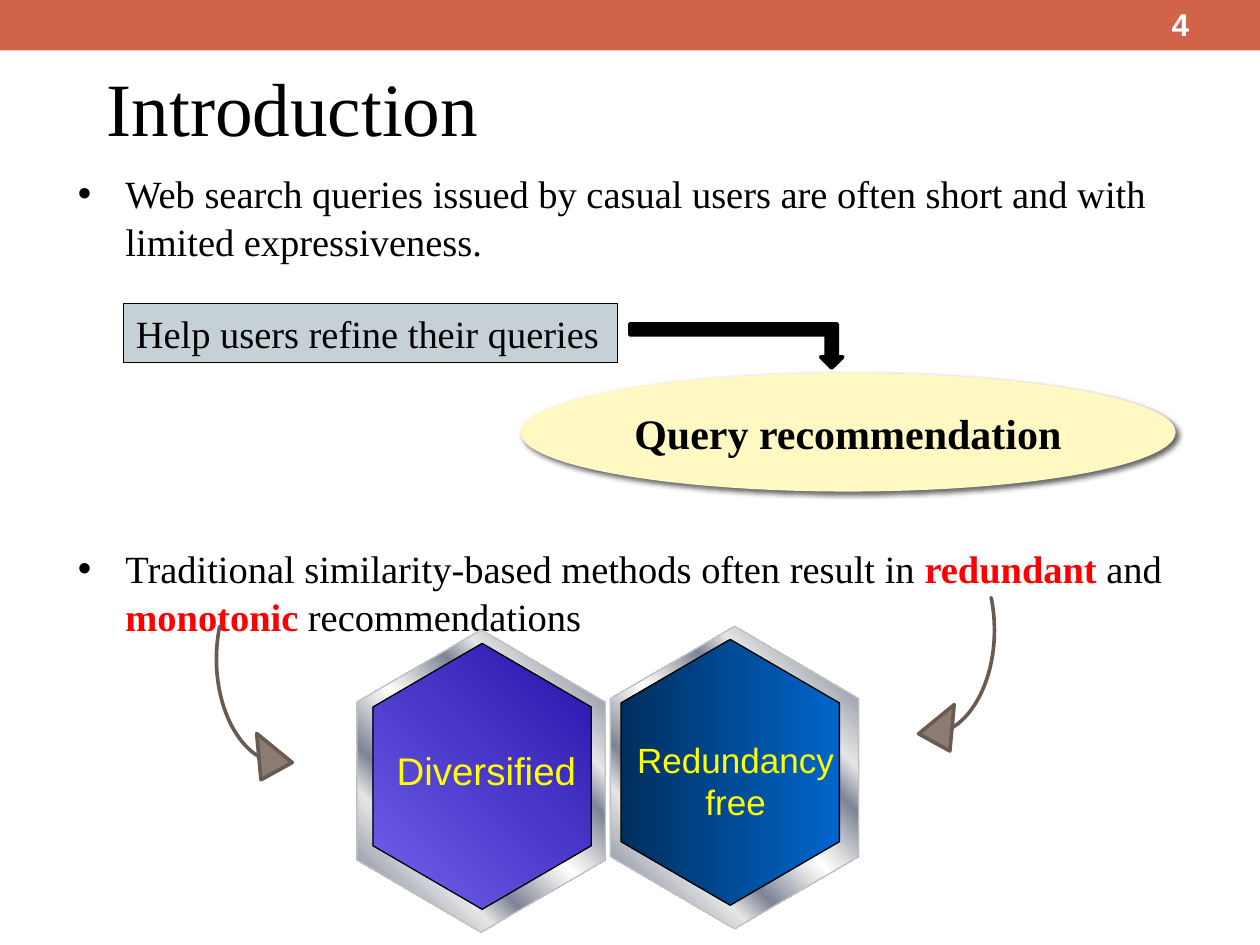
from dataclasses import dataclass
from typing import Optional

import pptx
import pptx.dml.color
import pptx.enum.shapes
import pptx.enum.text
import pptx.oxml
import pptx.oxml.ns
import pptx.util
from lxml import etree

Cm, Pt = pptx.util.Cm, pptx.util.Pt
qn = pptx.oxml.ns.qn
SHAPE = pptx.enum.shapes.MSO_SHAPE
ALIGN = pptx.enum.text.PP_ALIGN
ANCHOR = pptx.enum.text.MSO_ANCHOR
SERIF, SANS = "Times New Roman", "Arial"
BODY_SIZE, LINE_SPACING, BLANK_LINES = 22, 1.05, 6
LINE_PITCH = BODY_SIZE * 1.15 * LINE_SPACING
METAL = [(0, "E6E6E6"), (7, "7D8496"), (26, "E6E6E6"), (34, "7D8496"),
         (46, "E6E6E6"), (50, "FFFFFF"), (54, "E6E6E6"), (66, "7D8496"),
         (74, "E6E6E6"), (93, "7D8496"), (100, "E6E6E6")]


@dataclass
class Box:
    """Position and size in centimetres."""
    x: float
    y: float
    w: float
    h: float

    def emu(self) -> list:
        return [Cm(v) for v in (self.x, self.y, self.w, self.h)]


@dataclass
class Hexagon:
    rim: Box
    face: Box
    face_rotation: int
    stops: list
    angle: int
    label: Box
    text: str
    size: int


@dataclass
class CurvedArrow:
    box: Box
    rotation: int
    flip: Optional[str] = None


HEXAGONS = [
    Hexagon(Box(6.65, 13.23, 6.1, 5.03), Box(7.04, 13.44, 5.36, 4.42), 270,
            [(0, "7262EC"), (100, "2614AA")], 45,
            Box(7.72, 14.94, 4.17, 1.19), "Diversified", 22),
    Hexagon(Box(11.76, 13.16, 6.1, 5.03), Box(12.04, 13.36, 5.36, 4.42), 90,
            [(0, "0066CC"), (100, "002F5E")], 90,
            Box(12.57, 14.76, 4.52, 1.96), "Redundancy\nfree", 20),
]
CURVED_ARROWS = [
    CurvedArrow(Box(16.13, 10.9, 5.16, 3.61), 90),
    CurvedArrow(Box(3.12, 11.48, 5.16, 3.61), 270, "flipH"),
]


def rgb(value: str):
    return pptx.dml.color.RGBColor.from_string(value)


def add_run(p, text: str, size: float, font: str = SERIF,
            color: str = "000000", bold: bool = False) -> None:
    r = p.add_run()
    r.text = text
    r.font.size, r.font.name, r.font.bold = Pt(size), font, bold
    r.font.color.rgb = rgb(color)


def set_text(sp, text: str, align=ALIGN.LEFT, anchor=ANCHOR.TOP,
             wrap: bool = True, **fmt) -> None:
    tf = sp.text_frame
    tf.word_wrap, tf.vertical_anchor = wrap, anchor
    for i, line in enumerate(text.split("\n")):
        p = tf.add_paragraph() if i else tf.paragraphs[0]
        p.alignment = align
        add_run(p, line, **fmt)


def add_text(s, box: Box, text: str, **fmt) -> None:
    set_text(s.shapes.add_textbox(*box.emu()), text, **fmt)


def add_shape(s, kind, box: Box, fill: Optional[str] = None,
              line: Optional[str] = None, width: float = 0.75,
              rotation: int = 0, flip: Optional[str] = None, adj=()):
    sp = s.shapes.add_shape(kind, *box.emu())
    sp.shadow.inherit = False
    sp.rotation = rotation
    for i, value in enumerate(adj):
        sp.adjustments[i] = value
    if flip:
        sp.element.spPr.find(qn("a:xfrm")).set(flip, "1")
    if fill:
        sp.fill.solid()
        sp.fill.fore_color.rgb = rgb(fill)
    if line:
        sp.line.color.rgb = rgb(line)
        sp.line.width = Pt(width)
    else:
        sp.line.fill.background()
    return sp


def set_gradient(sp, stops: list, angle: int) -> None:
    """Fill with (percent, colour) stops along a clockwise angle."""
    sp.fill.gradient()
    sp.fill.gradient_angle = 360 - angle
    gs_list = next(sp.element.spPr.iter(qn("a:gsLst")))
    for gs in list(gs_list):
        gs_list.remove(gs)
    for pos, color in stops:
        gs = etree.SubElement(gs_list, qn("a:gs"), pos=str(pos * 1000))
        etree.SubElement(gs, qn("a:srgbClr"), val=color)


def add_drop_shadow(sp) -> None:
    effects = sp.element.spPr.find(qn("a:effectLst"))
    shadow = etree.SubElement(effects, qn("a:outerShdw"), blurRad=str(Pt(3)),
                              dist=str(Pt(2)), dir=str(45 * 60000),
                              algn="ctr", rotWithShape="0")
    color = etree.SubElement(shadow, qn("a:srgbClr"), val="000000")
    etree.SubElement(color, qn("a:alpha"), val="60000")


def add_bullets(s, box: Box, bullets: list) -> None:
    """Each bullet is a list of (text, highlighted) pairs."""
    tf = s.shapes.add_textbox(*box.emu()).text_frame
    tf.word_wrap = True
    for i, parts in enumerate(bullets):
        p = tf.add_paragraph() if i else tf.paragraphs[0]
        p.line_spacing = LINE_SPACING
        p.space_before = Pt(round(BLANK_LINES * LINE_PITCH) if i else 0)
        pPr = p._p.get_or_add_pPr()
        pPr.set("marL", str(Cm(0.96)))
        pPr.set("indent", str(-Cm(0.96)))
        etree.SubElement(pPr, qn("a:buFont"), typeface=SANS)
        etree.SubElement(pPr, qn("a:buChar"), char="•")
        for text, highlighted in parts:
            add_run(p, text, BODY_SIZE, bold=highlighted,
                    color="FF0000" if highlighted else "000000")


def add_hexagon(s, item: Hexagon) -> None:
    layers = [(item.rim, 270, METAL, 45, "C0C0C0"),
              (item.face, item.face_rotation, item.stops, item.angle, "000000")]
    for box, rotation, stops, angle, line in layers:
        sp = add_shape(s, SHAPE.HEXAGON, box, line=line, rotation=rotation,
                       adj=(0.29, 1.15))
        set_gradient(sp, stops, angle)
    add_text(s, item.label, item.text, size=item.size, font=SANS,
             color="FFFF00", align=ALIGN.CENTER, wrap=False)


def main() -> None:
    prs = pptx.Presentation()
    prs.slide_width, prs.slide_height = Cm(25.4), Cm(19.05)
    s = prs.slides.add_slide(prs.slide_layouts[6])

    add_shape(s, SHAPE.RECTANGLE, Box(0, 0, 25.4, 1.02), "D16349")
    add_text(s, Box(1.9, 0.97, 20.12, 2.36), "Introduction", size=43,
             anchor=ANCHOR.MIDDLE)
    add_text(s, Box(23.37, 0.05, 1.35, 0.86), "4", size=18, font=SANS,
             color="FFFFFF", bold=True, anchor=ANCHOR.MIDDLE)
    add_bullets(s, Box(1.32, 3.25, 22.99, 12.75), [
        [("Web search queries issued by casual users are often short and "
          "with limited expressiveness.", False)],
        [("Traditional similarity-based methods often result in ", False),
         ("redundant", True), (" and ", False), ("monotonic", True),
         (" recommendations", False)],
    ])

    oval = add_shape(s, SHAPE.OVAL, Box(10.49, 7.52, 13.21, 2.39), "FFF8C2")
    add_drop_shadow(oval)
    set_text(oval, "Query recommendation", size=24, bold=True,
             align=ALIGN.CENTER, anchor=ANCHOR.MIDDLE)
    goal = add_shape(s, SHAPE.RECTANGLE, Box(2.49, 6.12, 9.96, 1.19),
                     "C5D1D7", "000000")
    set_text(goal, "Help users refine their queries", size=22, wrap=False)
    add_shape(s, SHAPE.BENT_UP_ARROW, Box(12.7, 6.53, 4.29, 0.89), "000000",
              "000000", 2.08, flip="flipV")

    for item in HEXAGONS:
        add_hexagon(s, item)
    for arrow in CURVED_ARROWS:
        add_shape(s, SHAPE.CIRCULAR_ARROW, arrow.box, "8C7B70", "685B53", 2.08,
                  arrow.rotation, arrow.flip, (0, 11.42, 207.76, 145.57, 0.13))
    prs.save("out.pptx")


if __name__ == "__main__":
    main()
